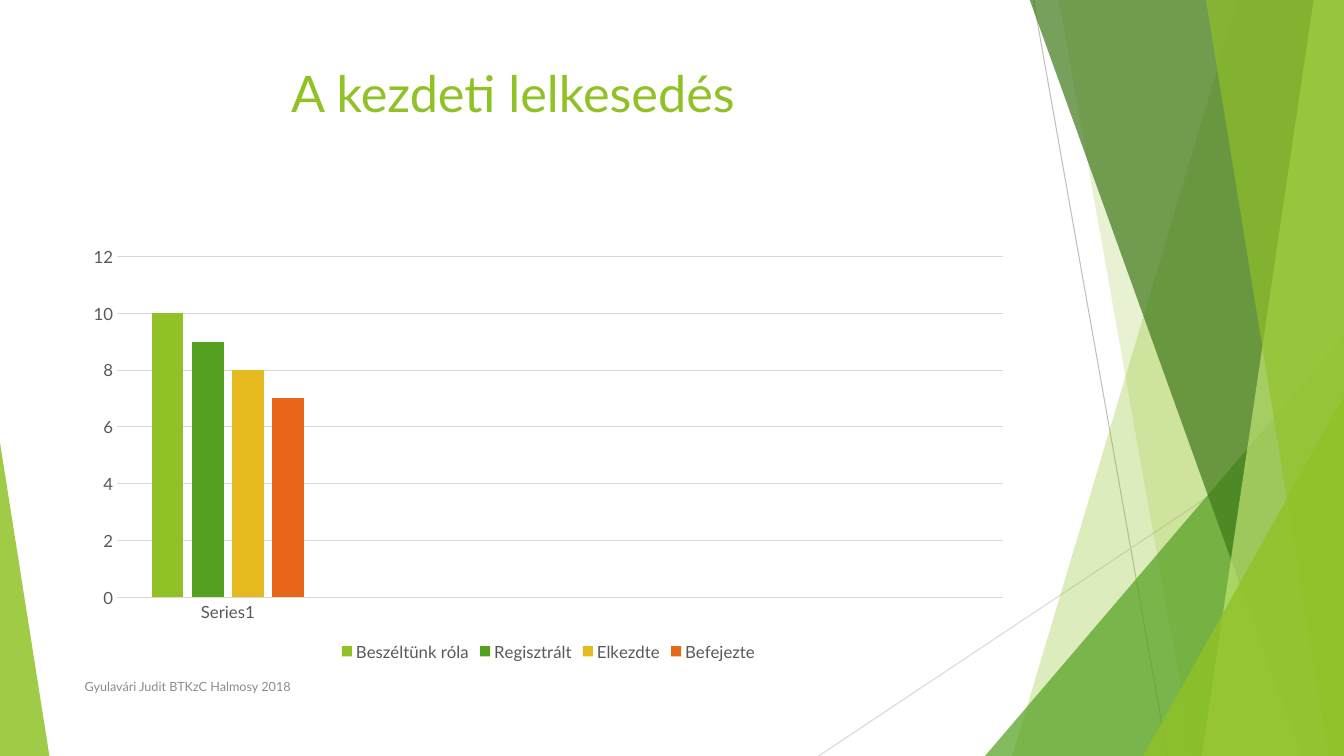
"""Build the slide 'A kezdeti lelkesedés' with a column chart and green facets."""
from lxml import etree
from pptx import Presentation
from pptx.chart.data import CategoryChartData
from pptx.dml.color import RGBColor
from pptx.enum import chart as ch, shapes as sh, text as tx
from pptx.oxml import ns
from pptx.util import Inches, Pt

LIME = RGBColor(0x90, 0xC2, 0x26)
GREEN = RGBColor(0x54, 0xA0, 0x21)
DARK = RGBColor(0x3F, 0x78, 0x19)
PALE = RGBColor(0xC0, 0xE4, 0x74)
GOLD = RGBColor(0xE6, 0xB9, 0x1E)
ORANGE = RGBColor(0xE7, 0x66, 0x18)
SILVER = RGBColor(0xBF, 0xBF, 0xBF)
MIST = RGBColor(0xD9, 0xD9, 0xD9)
GRAY = RGBColor(0x8C, 0x8C, 0x8C)
SLATE = RGBColor(0x59, 0x59, 0x59)
FONT = "Lato"
WIDE, HIGH, TOP = 13.33, 7.5, -0.01

deck = Presentation()
deck.slide_width, deck.slide_height = Inches(WIDE), Inches(HIGH)
slide = deck.slides.add_slide(deck.slide_layouts[6])
parts = slide.shapes


def paint(shape, color, alpha):
    """Give a facet a see-through fill without outline or shadow."""
    shape.shadow.inherit = False
    shape.line.fill.background()
    shape.fill.solid()
    shape.fill.fore_color.rgb = color
    tint = shape.fill._xPr.find(".//" + ns.qn("a:srgbClr"))
    etree.SubElement(tint, ns.qn("a:alpha"), val=str(alpha * 1000))


def write(words, box, size, color, anchor):
    """Add one line of text in a wrapping box."""
    frame = parts.add_textbox(*map(Inches, box)).text_frame
    frame.word_wrap = True
    frame.vertical_anchor = anchor
    frame.text = words
    font = frame.paragraphs[0].runs[0].font
    font.name, font.size, font.color.rgb = FONT, Pt(size), color


for x1, y1, x2, y2, color in [
    (10.25, 0, 11.58, HIGH, SILVER),
    (WIDE, 4.03, 8.12, HIGH, MIST),
]:
    line = parts.add_connector(
        sh.MSO_CONNECTOR.STRAIGHT, *map(Inches, (x1, y1, x2, y2)))
    line.line.color.rgb, line.line.width = color, Pt(0.75)
    etree.SubElement(line._element.spPr, ns.qn("a:effectLst"))

bands = [
    (12.28, 10.04, LIME, 30),
    (10.5, 11.83, LIME, 20),
    (9.77, 3.33, 3.56, 4.17, 1, GREEN, 72),
    (10.21, 12.91, DARK, 70),
    (13.03, 11.92, PALE, 70),
    (11.96, 13.18, LIME, 65),
    (11.34, 3.93, 1.99, 3.57, 1, LIME, 80),
    (0, 4.39, 0.49, 3.11, 0, LIME, 85),
]
for *geo, color, alpha in bands:
    if len(geo) == 2:
        high, low = geo
        pen = parts.build_freeform(Inches(high), Inches(TOP))
        pen.add_line_segments([
            (Inches(x), Inches(y))
            for x, y in [(WIDE, TOP), (WIDE, HIGH), (low, HIGH)]])
        facet = pen.convert_to_shape()
    else:
        *box, tip = geo
        facet = parts.add_shape(
            sh.MSO_SHAPE.ISOSCELES_TRIANGLE, *map(Inches, box))
        facet.adjustments[0] = tip
    paint(facet, color, alpha)

write("A kezdeti lelkesedés", (2.79, 0.57, 5.38, 1.44), 36, LIME,
      tx.MSO_ANCHOR.TOP)
write("Gyulavári Judit BTKzC Halmosy 2018", (0.74, 6.61, 6.89, 0.4), 9, GRAY,
      tx.MSO_ANCHOR.MIDDLE)

steps = [
    ("Beszéltünk róla", 10, LIME),
    ("Regisztrált", 9, GREEN),
    ("Elkezdte", 8, GOLD),
    ("Befejezte", 7, ORANGE),
]
data = CategoryChartData()
data.categories = ["Series1", "", "", ""]
for name, count, color in steps:
    data.add_series(name, [count, None, None, None])
chart = parts.add_chart(
    ch.XL_CHART_TYPE.COLUMN_CLUSTERED,
    *map(Inches, (0.74, 2.36, 9.4, 4.24)), data).chart
chart.has_title = False
chart.font.name, chart.font.size = FONT, Pt(12)
chart.font.color.rgb = SLATE
chart.has_legend = True
chart.legend.position = ch.XL_LEGEND_POSITION.BOTTOM
chart.legend.include_in_layout = False

plot = chart.plots[0]
plot.gap_width, plot.overlap = 219, -27
plot.vary_by_categories = False
for bar, (name, count, color) in zip(plot.series, steps):
    bar.format.fill.solid()
    bar.format.fill.fore_color.rgb = color

for axis in (chart.category_axis, chart.value_axis):
    axis.major_tick_mark = axis.minor_tick_mark = ch.XL_TICK_MARK.NONE
chart.value_axis.minimum_scale, chart.value_axis.maximum_scale = 0, 12
chart.value_axis.major_unit = 2
chart.value_axis.format.line.fill.background()
chart.value_axis.has_major_gridlines = True
for rule in (chart.category_axis.format.line,
             chart.value_axis.major_gridlines.format.line):
    rule.color.rgb, rule.width = MIST, Pt(0.75)

deck.save("out.pptx")
